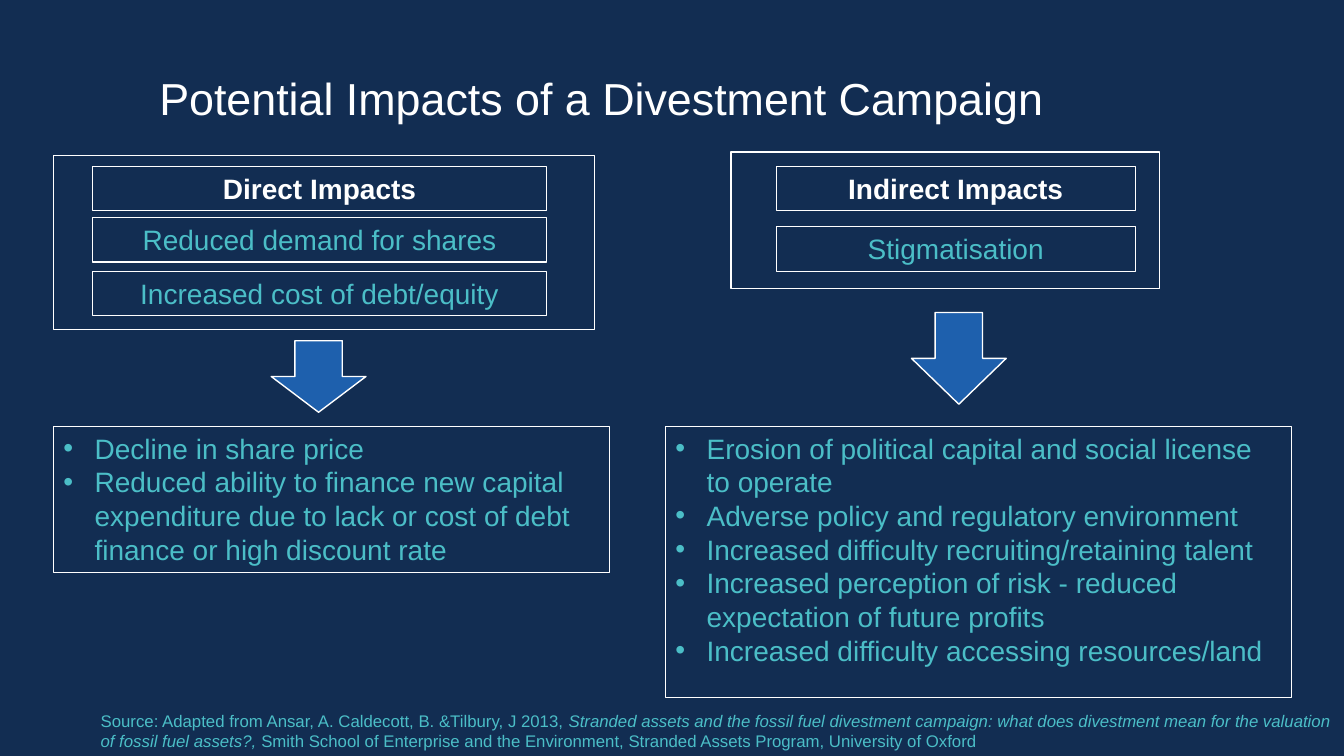
"""Build the slide on potential impacts of a divestment campaign."""
import pptx
import pptx.util
import pptx.dml.color
import pptx.enum.shapes
import pptx.enum.text
import lxml.etree

Inches = pptx.util.Inches
Pt = pptx.util.Pt
RGB = pptx.dml.color.RGBColor.from_string
SHAPE = pptx.enum.shapes.MSO_SHAPE
ALIGN = pptx.enum.text.PP_ALIGN
ANCHOR = pptx.enum.text.MSO_ANCHOR
COLORS = {"navy": "122D52", "white": "FFFFFF", "teal": "4BBEC7", "blue": "1E60AD"}


def add_outlined(kind, place, weight, fill=None):
    shape = page.shapes.add_shape(kind, *[Inches(value) for value in place])
    shape.shadow.inherit = False
    shape.line.color.rgb = RGB(COLORS["white"])
    shape.line.width = Pt(weight)
    if fill:
        shape.fill.solid()
        shape.fill.fore_color.rgb = RGB(COLORS[fill])
    else:
        shape.fill.background()
    shape.text_frame.word_wrap = True
    shape.text_frame.vertical_anchor = ANCHOR.TOP
    return shape


def style_span(span, size, color, bold=False, italic=False):
    span.font.name = "Arial"
    span.font.size = Pt(size)
    span.font.color.rgb = RGB(COLORS[color])
    span.font.bold = bold
    span.font.italic = italic


deck = pptx.Presentation()
deck.slide_width = Inches(13.33)
deck.slide_height = Inches(7.5)
page = deck.slides.add_slide(deck.slide_layouts[5])
page.background.fill.solid()
page.background.fill.fore_color.rgb = RGB(COLORS["navy"])

title = page.shapes.title
title.left, title.top = Inches(1.48), Inches(0.59)
title.width, title.height = Inches(10.91), Inches(0.83)
title.text_frame.text = "Potential Impacts of a Divestment Campaign"
title.text_frame.vertical_anchor = ANCHOR.MIDDLE
title.text_frame.paragraphs[0].alignment = ALIGN.LEFT
title.text_frame.paragraphs[0].line_spacing = 0.9
style_span(title.text_frame.paragraphs[0].runs[0], 32, "white")

impacts = [
    {
        "frame": (0.53, 1.54, 5.37, 1.73),
        "left": 0.92,
        "width": 4.5,
        "labels": [
            (1.65, "Direct Impacts"),
            (2.16, "Reduced demand for shares"),
            (2.69, "Increased cost of debt/equity"),
        ],
        "arrow": (2.69, 3.38, 0.94, 0.71),
        "outcome": (0.53, 4.23, 5.52, 1.45),
        "bullets": [
            "Decline in share price",
            "Reduced ability to finance new capital expenditure due to lack "
            "or cost of debt finance or high discount rate",
        ],
    },
    {
        "frame": (7.25, 1.51, 4.25, 1.35),
        "left": 7.7,
        "width": 3.56,
        "labels": [(1.65, "Indirect Impacts"), (2.25, "Stigmatisation")],
        "arrow": (9.04, 3.1, 0.94, 0.91),
        "outcome": (6.6, 4.23, 6.21, 2.69),
        "bullets": [
            "Erosion of political capital and social license to operate",
            "Adverse policy and regulatory environment",
            "Increased difficulty recruiting/retaining talent",
            "Increased perception of risk - reduced expectation of future profits",
            "Increased difficulty accessing resources/land",
        ],
    },
]

for impact in impacts:
    add_outlined(SHAPE.RECTANGLE, impact["frame"], 1)
    for index, (top, label) in enumerate(impact["labels"]):
        box = add_outlined(SHAPE.RECTANGLE, (impact["left"], top, impact["width"], 0.44), 0.75)
        box.text_frame.text = label
        para = box.text_frame.paragraphs[0]
        para.alignment = ALIGN.CENTER
        heading = index == 0
        style_span(para.runs[0], 20, "white" if heading else "teal", bold=heading)

    add_outlined(SHAPE.DOWN_ARROW, impact["arrow"], 1, "blue")

    outcome = add_outlined(SHAPE.RECTANGLE, impact["outcome"], 0.75)
    outcome.text_frame.text = "\n".join(impact["bullets"])
    for para in outcome.text_frame.paragraphs:
        para.alignment = ALIGN.LEFT
        properties = para._p.get_or_add_pPr()
        properties.set("marL", str(Inches(0.31)))
        properties.set("indent", str(Inches(-0.31)))
        namespace = properties.nsmap["a"]
        font = lxml.etree.SubElement(properties, f"{{{namespace}}}buFont")
        font.set("typeface", "Arial")
        bullet = lxml.etree.SubElement(properties, f"{{{namespace}}}buChar")
        bullet.set("char", "•")
        style_span(para.runs[0], 20, "teal")

source = page.shapes.add_textbox(Inches(0.9), Inches(7), Inches(12.44), Inches(0.5))
source.text_frame.word_wrap = True
citation = [
    ("Source: Adapted from Ansar, A. Caldecott, B. &Tilbury, J 2013, ", False),
    ("Stranded assets and the fossil fuel divestment campaign: what does "
     "divestment mean for the valuation of fossil fuel assets?, ", True),
    ("Smith School of Enterprise and the Environment, Stranded Assets Program, "
     "University of Oxford", False),
]
for words, italic in citation:
    span = source.text_frame.paragraphs[0].add_run()
    span.text = words
    style_span(span, 12, "teal", italic=italic)

deck.save("out.pptx")
